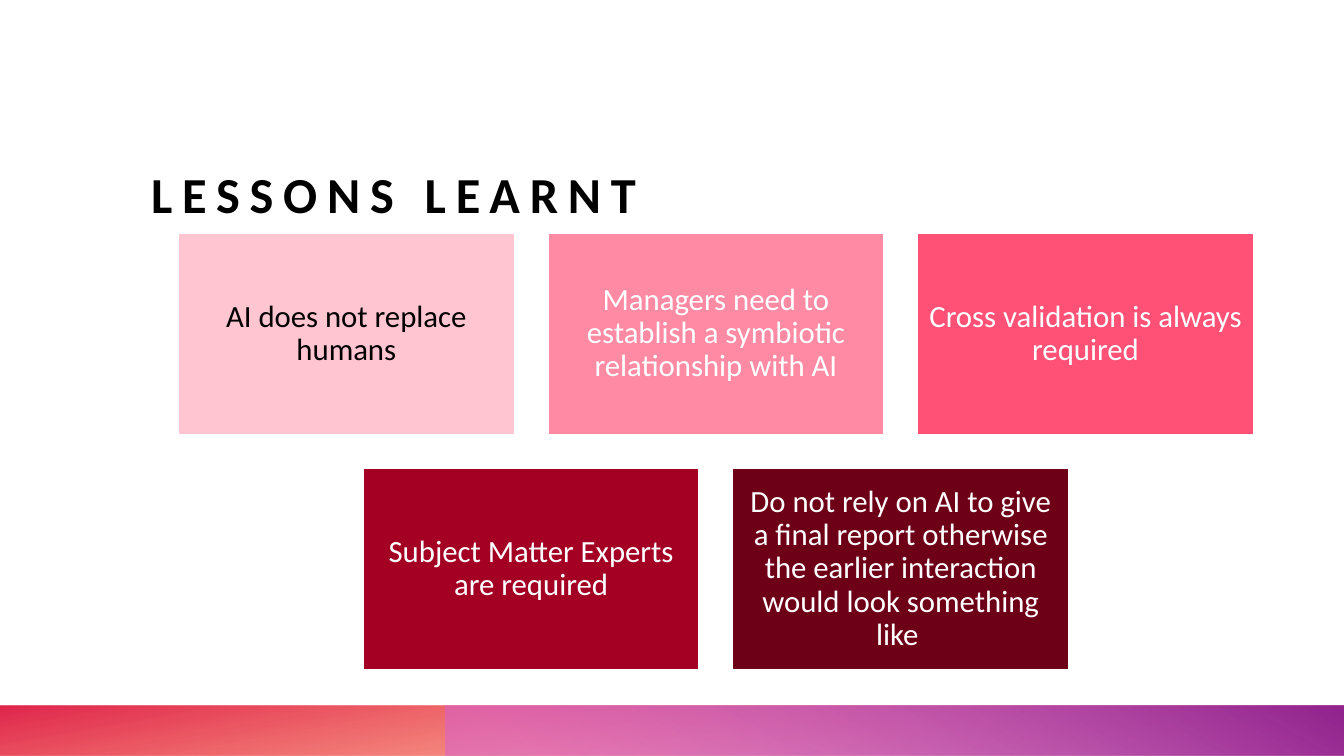
from lxml import etree
from pptx import Presentation
from pptx.dml.color import RGBColor
from pptx.enum.shapes import MSO_SHAPE
from pptx.enum.text import MSO_ANCHOR, MSO_AUTO_SIZE, PP_ALIGN
from pptx.oxml.ns import qn
from pptx.util import Pt

RECTANGLE = MSO_SHAPE.RECTANGLE
MIDDLE, BOTTOM = MSO_ANCHOR.MIDDLE, MSO_ANCHOR.BOTTOM
CENTER, LEFT = PP_ALIGN.CENTER, PP_ALIGN.LEFT
NO_FIT = MSO_AUTO_SIZE.NONE

TITLE = "LESSONS LEARNT"
LESSON_ROWS = [
    [
        ("AI does not replace humans", "FFC5D1", "000000"),
        ("Managers need to establish a symbiotic relationship with AI", "FF8AA3", "FFFFFF"),
        ("Cross validation is always required", "FF5076", "FFFFFF"),
    ],
    [
        ("Subject Matter Experts are required", "A30023", "FFFFFF"),
        ("Do not rely on AI to give a final report otherwise "
         "the earlier interaction would look something like ", "6D0017", "FFFFFF"),
    ],
]
FOOTER_BANDS = [
    {"left": 0, "angle": 260, "stops": [(14, "FE4A00", 28), (100, "DA002F", 85)]},
    {"left": 318, "angle": 300, "stops": [(9, "D861D4", 55), (99, "92248E", 100)]},
]
THEME = {
    "font": "Calibri",
    "title_size": 36,
    "title_color": "000000",
    "title_tracking": 7,
    "lesson_size": 22,
    "outline": "FFFFFF",
}
PAGE_WIDTH, PAGE_HEIGHT = 960, 540
BAND_HEIGHT = 36
BOX_WIDTH, BOX_HEIGHT, GAP = 240, 144, 24
GRID_CENTER, GRID_TOP = 511.4, 166.4
INSET = 6.6


def set_insets(frame, inset):
    frame.margin_left = frame.margin_right = Pt(inset)
    frame.margin_top = frame.margin_bottom = Pt(inset)


def set_font(font, size, color):
    font.name = THEME["font"]
    font.size = Pt(size)
    font.color.rgb = RGBColor.from_string(color)


def add_rectangle(page, left, top, width, height):
    box = page.shapes.add_shape(RECTANGLE, Pt(left), Pt(top), Pt(width), Pt(height))
    box.shadow.inherit = False
    return box


def add_band(page, left, angle, stops):
    band = add_rectangle(page, left, PAGE_HEIGHT - BAND_HEIGHT, PAGE_WIDTH - left, BAND_HEIGHT)
    band.line.fill.background()
    band.fill.gradient()
    band.fill.gradient_angle = 360 - angle
    stop_list = band.element.spPr.find(qn("a:gradFill")).find(qn("a:gsLst"))
    for old_stop in list(stop_list):
        stop_list.remove(old_stop)
    for position, color, opacity in stops:
        stop = etree.SubElement(stop_list, qn("a:gs"), pos=str(position * 1000))
        shade = etree.SubElement(stop, qn("a:srgbClr"), val=color)
        etree.SubElement(shade, qn("a:alpha"), val=str(opacity * 1000))


def add_title(page):
    title = page.shapes.title
    title.left, title.top, title.width, title.height = Pt(108), Pt(62.6), Pt(806.4), Pt(97.2)
    frame = title.text_frame
    frame.text = TITLE
    frame.auto_size = NO_FIT
    frame.word_wrap = True
    frame.vertical_anchor = BOTTOM
    set_insets(frame, 0)
    para = frame.paragraphs[0]
    para.alignment = LEFT
    span = para.runs[0]
    set_font(span.font, THEME["title_size"], THEME["title_color"])
    span.font.bold = True
    span.font._element.set("spc", str(THEME["title_tracking"] * 100))


def add_lesson(page, left, top, text, fill, color):
    box = add_rectangle(page, left, top, BOX_WIDTH, BOX_HEIGHT)
    box.fill.solid()
    box.fill.fore_color.rgb = RGBColor.from_string(fill)
    box.line.color.rgb = RGBColor.from_string(THEME["outline"])
    box.line.width = Pt(1)
    frame = box.text_frame
    frame.text = text
    frame.word_wrap = True
    frame.vertical_anchor = MIDDLE
    set_insets(frame, INSET)
    para = frame.paragraphs[0]
    para.alignment = CENTER
    para.line_spacing = 0.9
    set_font(para.font, THEME["lesson_size"], color)


def main():
    deck = Presentation()
    deck.slide_width, deck.slide_height = Pt(PAGE_WIDTH), Pt(PAGE_HEIGHT)
    page = deck.slides.add_slide(deck.slide_layouts[5])
    for band in FOOTER_BANDS:
        add_band(page, **band)
    add_title(page)
    for row, lessons in enumerate(LESSON_ROWS):
        row_width = len(lessons) * (BOX_WIDTH + GAP) - GAP
        row_left = GRID_CENTER - row_width / 2
        top = GRID_TOP + row * (BOX_HEIGHT + GAP)
        for column, lesson in enumerate(lessons):
            add_lesson(page, row_left + column * (BOX_WIDTH + GAP), top, *lesson)
    deck.save("out.pptx")


if __name__ == "__main__":
    main()
